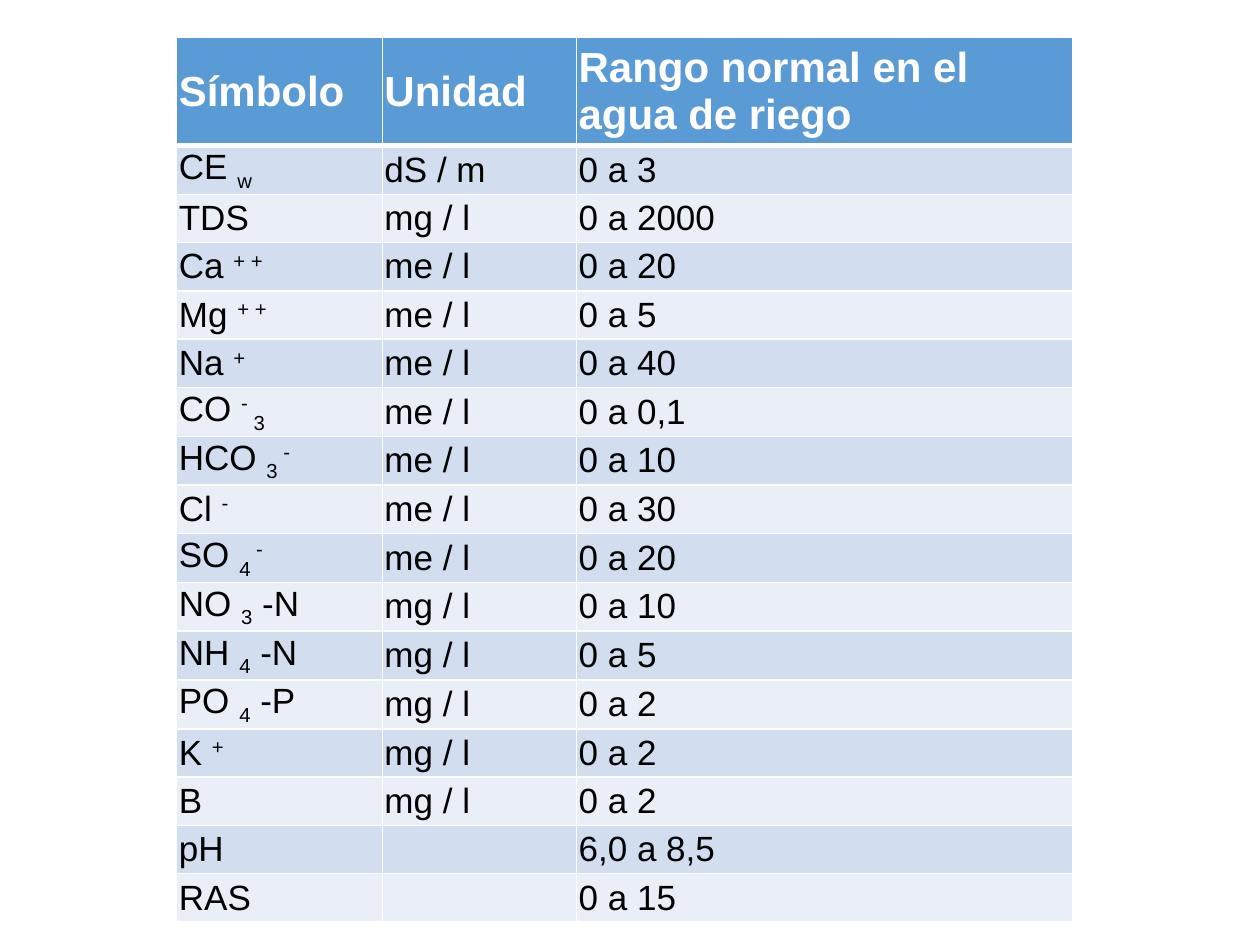
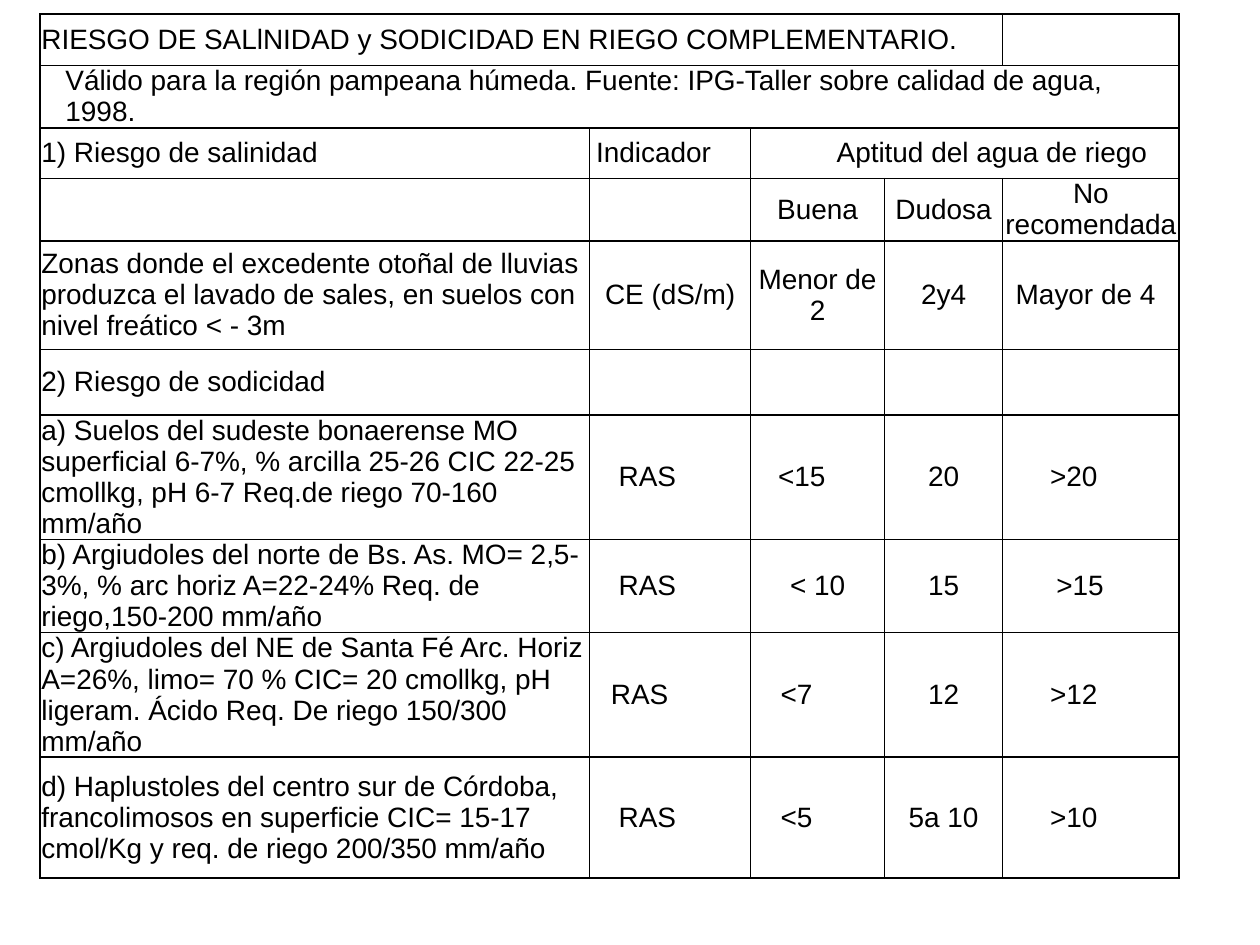
"""Build two slides of irrigation water tables: normal ranges and salinity and sodicity risk."""
from lxml import etree
from pptx import Presentation
from pptx import util as u
from pptx.dml import color
from pptx.enum import text
from pptx.oxml import ns

COLORS = {"header": "5B9BD5", "band_dark": "D2DEEF", "band_light": "EAEFF7",
          "white": "FFFFFF", "black": "000000"}
FONT = "Arial"
SUB, SUPER = -25000, 30000

RANGE_HEADINGS = ["Símbolo", "Unidad", "Rango normal en el agua de riego"]
RANGES = [
    (["CE ", ("w", SUB)], "dS / m", "0 a 3"),
    ("TDS", "mg / l", "0 a 2000"),
    (["Ca ", ("+ +", SUPER)], "me / l", "0 a 20"),
    (["Mg ", ("+ +", SUPER)], "me / l", "0 a 5"),
    (["Na ", ("+", SUPER)], "me / l", "0 a 40"),
    (["CO ", ("- ", SUPER), ("3", SUB)], "me / l", "0 a 0,1"),
    (["HCO ", ("3 ", SUB), ("-", SUPER)], "me / l", "0 a 10"),
    (["Cl ", ("-", SUPER)], "me / l", "0 a 30"),
    (["SO ", ("4 ", SUB), ("-", SUPER)], "me / l", "0 a 20"),
    (["NO ", ("3", SUB), " -N"], "mg / l", "0 a 10"),
    (["NH ", ("4", SUB), " -N"], "mg / l", "0 a 5"),
    (["PO ", ("4", SUB), " -P"], "mg / l", "0 a 2"),
    (["K ", ("+", SUPER)], "mg / l", "0 a 2"),
    ("B", "mg / l", "0 a 2"),
    ("pH", "", "6,0 a 8,5"),
    ("RAS", "", "0 a 15"),
]
RANGE_LAYOUT = {"left": 101, "top": 21.5, "columns": [117.5, 111, 283.5],
                "rows": [61.7] + [27.6] * len(RANGES)}

RISKS = [
    ["RIESGO DE SALlNIDAD y SODICIDAD EN RIEGO COMPLEMENTARIO.", "", "", "", ""],
    ["Válido para la región pampeana húmeda. Fuente: IPG-Taller sobre calidad de agua, 1998.",
     "", "", "", ""],
    ["1) Riesgo de salinidad", "Indicador", "Aptitud del agua de riego", "", ""],
    ["", "", "Buena", "Dudosa", "No recomendada"],
    ["Zonas donde el excedente otoñal de lluvias produzca el lavado de sales, en suelos con "
     "nivel freático < - 3m", "CE (dS/m)", "Menor de 2", "2y4", "Mayor de 4"],
    ["2) Riesgo de sodicidad", "", "", "", ""],
    ["a) Suelos del sudeste bonaerense MO superficial 6-7%, % arcilla 25-26 CIC 22-25 "
     "cmollkg, pH 6-7 Req.de riego 70-160 mm/año", "RAS", "<15", "20", ">20"],
    ["b) Argiudoles del norte de Bs. As. MO= 2,5-3%, % arc horiz A=22-24% Req. de "
     "riego,150-200 mm/año", "RAS", "< 10", "15", ">15"],
    ["c) Argiudoles del NE de Santa Fé Arc. Horiz A=26%, limo= 70 % CIC= 20 cmollkg, pH "
     "ligeram. Ácido Req. De riego 150/300 mm/año", "RAS", "<7", "12", ">12"],
    ["d) Haplustoles del centro sur de Córdoba, francolimosos en superficie CIC= 15-17 "
     "cmol/Kg y req. de riego 200/350 mm/año", "RAS", "<5", "5a 10", ">10"],
]
RISK_LAYOUT = {"left": 23, "top": 8, "columns": [314, 92, 76.5, 67.5, 100.8],
               "rows": [29.5, 29, 29, 34, 62, 37.5, 69, 52, 69, 69]}
RISK_SPANS = [((0, 0), (0, 3)), ((1, 0), (1, 4)), ((2, 2), (2, 4))]
LEFT_INDENTS = {(1, 0): 14.4, (2, 2): 31}
RIGHT_INDENTS = {(2, 1): 19, (4, 4): 6, (6, 1): 26, (6, 2): 18, (6, 4): 19.5,
                 (7, 1): 26, (7, 4): 12.5, (8, 1): 35, (8, 2): 24, (8, 4): 19.5,
                 (9, 1): 26, (9, 2): 24, (9, 4): 19.5}


def add_grid(presentation, layout):
    """Add a blank slide with one unstyled table and return the table."""
    slide = presentation.slides.add_slide(presentation.slide_layouts[6])
    columns, rows = layout["columns"], layout["rows"]
    table = slide.shapes.add_table(
        len(rows), len(columns), u.Pt(layout["left"]), u.Pt(layout["top"]),
        u.Pt(sum(columns)), u.Pt(sum(rows))).table
    table.first_row = table.horz_banding = False
    for column, width in zip(table.columns, columns):
        column.width = u.Pt(width)
    for row, height in zip(table.rows, rows):
        row.height = u.Pt(height)
    return table


def set_borders(cell, color_name, top=1, bottom=1):
    """Draw the four sides of a cell in one colour."""
    properties = cell._tc.get_or_add_tcPr()
    for position, (side, width) in enumerate(
            [("lnL", 1), ("lnR", 1), ("lnT", top), ("lnB", bottom)]):
        line = etree.Element(ns.qn(f"a:{side}"), w=str(u.Pt(width)))
        fill = etree.SubElement(line, ns.qn("a:solidFill"))
        etree.SubElement(fill, ns.qn("a:srgbClr"), val=COLORS[color_name])
        properties.insert(position, line)


def write_cell(cell, content, size, margins, color_name="black", bold=False,
               align=text.PP_ALIGN.LEFT):
    """Write plain text or a list of runs, with margins as left, top, right, bottom."""
    cell.vertical_anchor = text.MSO_ANCHOR.MIDDLE
    for side, margin in zip(("left", "top", "right", "bottom"), margins):
        setattr(cell, f"margin_{side}", u.Pt(margin))
    paragraph = cell.text_frame.paragraphs[0]
    paragraph.alignment = align
    paragraph.font.size = u.Pt(size)
    for part in [content] if isinstance(content, str) else content:
        words, baseline = (part, 0) if isinstance(part, str) else part
        if not words:
            continue
        run = paragraph.add_run()
        run.text = words
        for name, value in {"name": FONT, "size": u.Pt(size), "bold": bold}.items():
            setattr(run.font, name, value)
        run.font.color.rgb = color.RGBColor.from_string(COLORS[color_name])
        if baseline:
            run._r.get_or_add_rPr().set("baseline", str(baseline))


def build_ranges(presentation):
    """Build the banded table of normal ranges."""
    table = add_grid(presentation, RANGE_LAYOUT)
    for r, values in enumerate([RANGE_HEADINGS, *RANGES]):
        heading = r == 0
        band = "header" if heading else "band_dark" if r % 2 else "band_light"
        for c, value in enumerate(values):
            cell = table.cell(r, c)
            write_cell(cell, value, 24 if heading else 20, [1.2] * 4,
                       "white" if heading else "black", heading)
            cell.fill.solid()
            cell.fill.fore_color.rgb = color.RGBColor.from_string(COLORS[band])
            set_borders(cell, "white", top=3 if r == 1 else 1, bottom=3 if heading else 1)


def build_risks(presentation):
    """Build the ruled table of salinity and sodicity risk."""
    table = add_grid(presentation, RISK_LAYOUT)
    for start, end in RISK_SPANS:
        table.cell(*start).merge(table.cell(*end))
    for r, values in enumerate(RISKS):
        for c, value in enumerate(values):
            cell = table.cell(r, c)
            margins = [LEFT_INDENTS.get((r, c), 0 if c else 0.7), 0,
                       RIGHT_INDENTS.get((r, c), 0), 0]
            write_cell(cell, value, 16, margins,
                       align=text.PP_ALIGN.CENTER if c else text.PP_ALIGN.LEFT)
            cell.fill.background()
            set_borders(cell, "black")


def main():
    """Create and save the presentation."""
    presentation = Presentation()
    presentation.slide_width, presentation.slide_height = u.Pt(720), u.Pt(540)
    build_ranges(presentation)
    build_risks(presentation)
    presentation.save("out.pptx")


if __name__ == "__main__":
    main()
